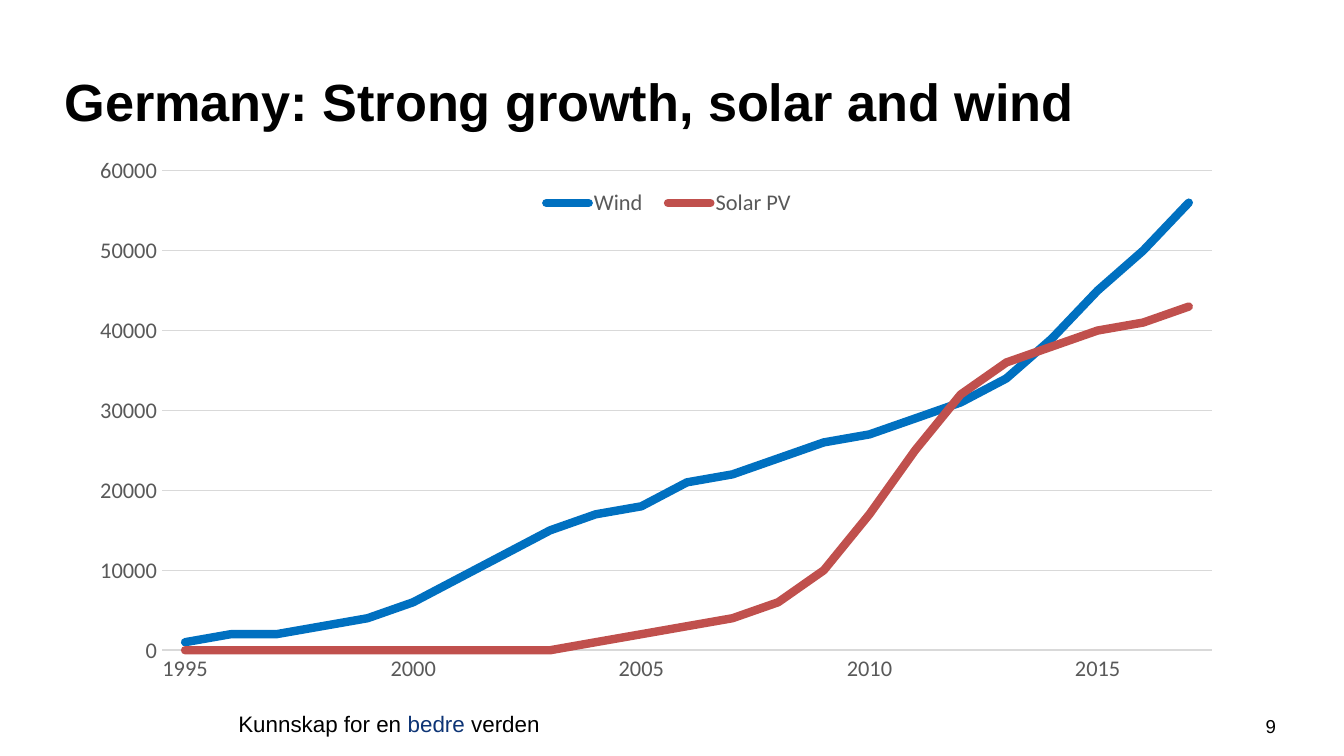
from dataclasses import dataclass

from lxml.etree import SubElement
from pptx import Presentation
from pptx.chart.data import CategoryChartData
from pptx.dml.color import RGBColor
from pptx.enum.chart import XL_CHART_TYPE, XL_LEGEND_POSITION, XL_MARKER_STYLE, XL_TICK_MARK
from pptx.enum.text import MSO_ANCHOR, MSO_AUTO_SIZE, PP_ALIGN
from pptx.oxml import parse_xml
from pptx.oxml.ns import nsdecls, qn
from pptx.util import Inches, Pt


@dataclass(frozen=True)
class Theme:
    """Fonts, colours and type sizes of the slide."""
    text_font: str = "Arial"
    chart_font: str = "Calibri"
    ink: str = "000000"
    accent: str = "0D3475"
    label: str = "595959"
    grid: str = "D9D9D9"
    wind: str = "0070C0"
    solar: str = "C0504D"
    title_size: int = 28
    label_size: int = 12
    small_size: int = 10


THEME = Theme()
WIDTH = Inches(10)
HEIGHT = WIDTH * 9 // 16
COLUMNS, ROWS = 100, 56.25
YEARS = range(1995, 2018)
WIND = [1, 2, 2, 3, 4, 6, 9, 12, 15, 17, 18, 21, 22, 24, 26, 27, 29, 31, 34, 39, 45, 50, 56]
SOLAR = [0] * 9 + [1, 2, 3, 4, 6, 10, 17, 25, 32, 36, 38, 40, 41, 43]
SERIES = [("Wind", WIND, THEME.wind), ("Solar PV", SOLAR, THEME.solar)]


def cells(column, row, columns, rows):
    """Turn grid cells into left, top, width and height."""
    across, down = WIDTH / COLUMNS, HEIGHT / ROWS
    return [round(length) for length in (column * across, row * down, columns * across, rows * down)]


def style_font(font, name, size, color, bold=False):
    """Set the face, size, colour and weight of a font."""
    font.name, font.size, font.bold = name, Pt(size), bold
    font.color.rgb = RGBColor.from_string(color)


def style_line(line, color, width):
    """Set the colour and width of a line."""
    line.color.rgb = RGBColor.from_string(color)
    line.width = Pt(width)


def set_title(page, text, area):
    """Fill, move and format the title placeholder."""
    title = page.shapes.title
    title.left, title.top, title.width, title.height = cells(*area)
    frame = title.text_frame
    frame.text = text
    frame.auto_size = MSO_AUTO_SIZE.NONE
    frame.vertical_anchor = MSO_ANCHOR.MIDDLE
    para = frame.paragraphs[0]
    para.alignment = PP_ALIGN.LEFT
    style_font(para.runs[0].font, THEME.text_font, THEME.title_size, THEME.ink, True)


def add_label(page, spans, area, size, alignment=PP_ALIGN.LEFT):
    """Add a one-line text box made of coloured spans."""
    box = page.shapes.add_textbox(*cells(*area))
    box.text_frame.word_wrap = False
    para = box.text_frame.paragraphs[0]
    para.alignment = alignment
    for text, color in spans:
        span = para.add_run()
        span.text = text
        style_font(span.font, THEME.text_font, size, color)


def set_layout(parent, position, shares, inner=False):
    """Place a chart part by shares of the chart's size."""
    for old in parent.findall(qn("c:layout")):
        parent.remove(old)
    layout = parse_xml(f"<c:layout {nsdecls('c')}/>")
    parent.insert(position, layout)
    manual = SubElement(layout, qn("c:manualLayout"))
    settings = [("layoutTarget", "inner")] if inner else []
    settings += [("xMode", "edge"), ("yMode", "edge"), *zip("xywh", shares)]
    for name, value in settings:
        SubElement(manual, qn(f"c:{name}")).set("val", str(value))


def style_axes(chart):
    """Format the year axis and the capacity axis."""
    years, capacity = chart.category_axis, chart.value_axis
    for axis in (years, capacity):
        axis.major_tick_mark = axis.minor_tick_mark = XL_TICK_MARK.NONE
        style_font(axis.tick_labels.font, THEME.chart_font, THEME.label_size, THEME.label)
    style_line(years.format.line, THEME.grid, 1)
    capacity.format.line.fill.background()
    capacity.minimum_scale, capacity.maximum_scale, capacity.major_unit = 0, 60000, 10000
    style_line(capacity.major_gridlines.format.line, THEME.grid, 0.75)


def style_series(chart):
    """Draw each series as a thick, round-ended line without markers."""
    for series, (name, thousands, color) in zip(chart.plots[0].series, SERIES):
        series.smooth = False
        series.marker.style = XL_MARKER_STYLE.NONE
        style_line(series.format.line, color, 4.5)
    for line in chart.element.findall(f".//{qn('c:ser')}/{qn('c:spPr')}/{qn('a:ln')}"):
        line.set("cap", "rnd")
        SubElement(line, qn("a:round"))


def style_legend(chart):
    """Show the legend over the upper part of the plot."""
    chart.has_legend = True
    legend = chart.legend
    legend.position = XL_LEGEND_POSITION.BOTTOM
    legend.include_in_layout = False
    style_font(legend.font, THEME.chart_font, THEME.label_size, THEME.label)
    set_layout(chart.element.find(".//" + qn("c:legend")), 1, (0.39, 0.05, 0.23, 0.08))


def add_growth_chart(page, area):
    """Add the line chart with a label at every fifth year."""
    data = CategoryChartData()
    data.categories = [str(year) if year % 5 == 0 else "" for year in YEARS]
    for name, thousands, color in SERIES:
        data.add_series(name, [value * 1000 for value in thousands])
    chart = page.shapes.add_chart(XL_CHART_TYPE.LINE, *cells(*area), data).chart
    chart.has_title = False
    style_font(chart.font, THEME.chart_font, THEME.small_size, THEME.ink)
    chart.plots[0].vary_by_categories = False
    style_series(chart)
    style_axes(chart)
    style_legend(chart)
    set_layout(chart.element.find(".//" + qn("c:plotArea")), 0, (0.09, 0.03, 0.86, 0.89), True)


def main():
    """Build the slide and save it."""
    deck = Presentation()
    deck.slide_width, deck.slide_height = WIDTH, HEIGHT
    page = deck.slides.add_slide(deck.slide_layouts[5])
    motto = [("Kunnskap for en ", THEME.ink), ("bedre ", THEME.accent), ("verden", THEME.ink)]
    add_label(page, motto, (16.75, 52.35, 24.6, 3), THEME.label_size)
    add_label(page, [("9", THEME.ink)], (92.7, 52.7, 3.7, 3), THEME.small_size, PP_ALIGN.CENTER)
    set_title(page, "Germany: Strong growth, solar and wind", (3.8, 2.5, 80.4, 10))
    add_growth_chart(page, (3.9, 11.5, 90.8, 40.1))
    deck.save("out.pptx")


if __name__ == "__main__":
    main()
